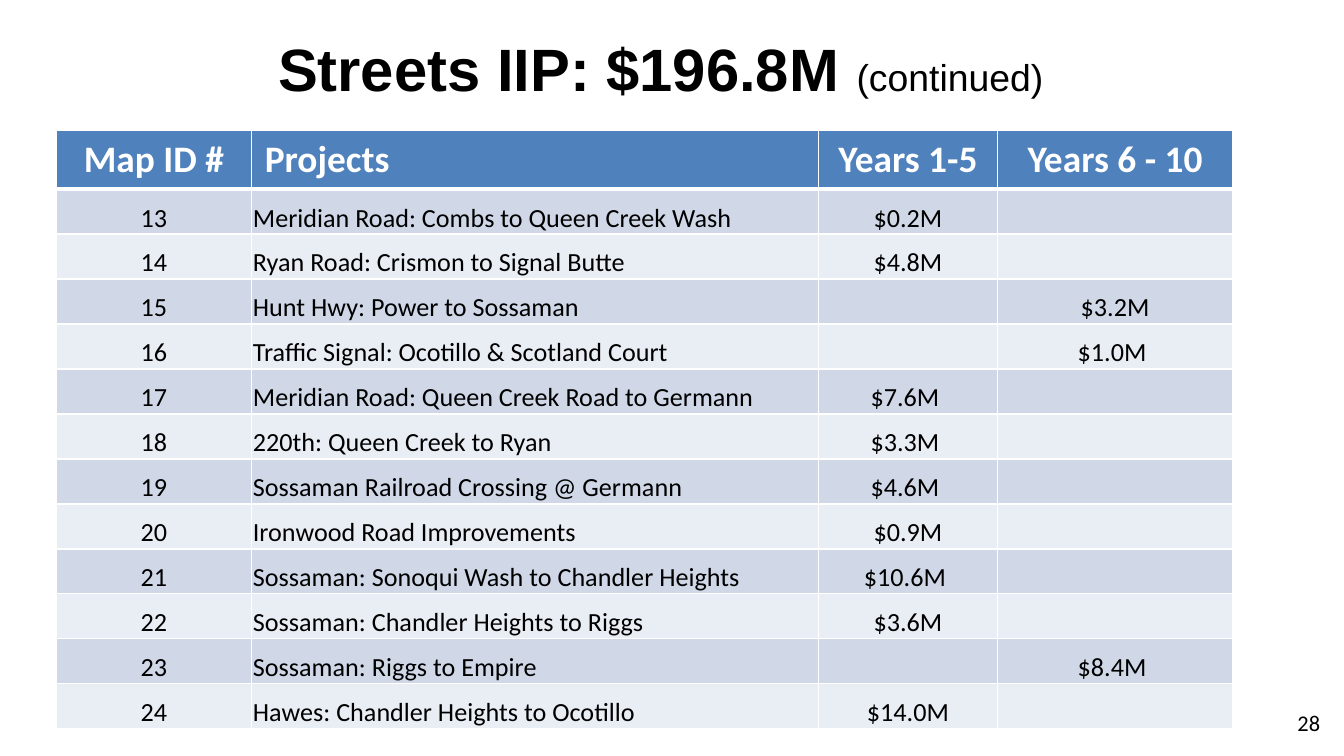
"""Build the Streets IIP slide with its table of projects."""
from lxml.etree import SubElement
from pptx import Presentation
from pptx.dml.color import RGBColor
from pptx.enum.text import MSO_ANCHOR, PP_ALIGN
from pptx.oxml.ns import qn
from pptx.util import Cm, Pt

BLACK = RGBColor(0x00, 0x00, 0x00)
WHITE = RGBColor(0xFF, 0xFF, 0xFF)
BLUE = RGBColor(0x4F, 0x81, 0xBD)
BANDS = (RGBColor(0xD0, 0xD8, 0xE8), RGBColor(0xE9, 0xED, 0xF4))

TITLE = {"name": "Arial", "size": Pt(32), "bold": True}
SUBTITLE = {"name": "Arial", "size": Pt(20), "bold": False}
NUMBER = {"name": "Calibri", "size": Pt(12), "bold": False}
HEADER = {"name": "Calibri", "size": Pt(20), "bold": True}
BODY = {"name": "Calibri", "size": Pt(14), "bold": False}
TIGHT = {"margin_left": Cm(0.03), "margin_right": Cm(0.03),
         "margin_top": Cm(0.03), "margin_bottom": 0,
         "vertical_anchor": MSO_ANCHOR.BOTTOM}

COL_WIDTHS = (3.68, 10.72, 3.38, 4.45)
ALIGNS = (PP_ALIGN.CENTER, PP_ALIGN.LEFT, PP_ALIGN.CENTER, PP_ALIGN.CENTER)
HEADER_HEIGHT, ROW_HEIGHT = 1.1, 0.85
FIRST_ID = 13
HEADINGS = ("Map ID #", "Projects", "Years 1-5", "Years 6 - 10")
PROJECTS = (
    ("Meridian Road: Combs to Queen Creek Wash", "$0.2M", ""),
    ("Ryan Road: Crismon to Signal Butte", "$4.8M", ""),
    ("Hunt Hwy: Power to Sossaman", "", "$3.2M"),
    ("Traffic Signal: Ocotillo & Scotland Court", "", "$1.0M "),
    ("Meridian Road: Queen Creek Road to Germann", "$7.6M ", ""),
    ("220th: Queen Creek to Ryan", "$3.3M ", ""),
    ("Sossaman Railroad Crossing @ Germann", "$4.6M ", ""),
    ("Ironwood Road Improvements", "$0.9M", ""),
    ("Sossaman: Sonoqui Wash to Chandler Heights", "$10.6M ", ""),
    ("Sossaman: Chandler Heights to Riggs", "$3.6M", ""),
    ("Sossaman: Riggs to Empire", "", "$8.4M "),
    ("Hawes: Chandler Heights to Ocotillo", "$14.0M", ""),
)


def set_attrs(obj, values):
    """Set each named attribute on an object."""
    for name, value in values.items():
        setattr(obj, name, value)


def add_run(p, text, style, color=BLACK):
    """Append a formatted run to a paragraph."""
    r = p.add_run()
    r.text = text
    set_attrs(r.font, style)
    r.font.color.rgb = color


def add_text(s, box, runs, align, anchor=MSO_ANCHOR.TOP):
    """Add a one-paragraph text box made of (text, style) runs."""
    tf = s.shapes.add_textbox(*map(Cm, box)).text_frame
    set_attrs(tf, {"word_wrap": True, "vertical_anchor": anchor})
    p = tf.paragraphs[0]
    p.alignment = align
    for text, style in runs:
        add_run(p, text, style)


def set_borders(cell, top=1, bottom=1):
    """Give a cell white borders with widths in points."""
    tc_pr = cell._tc.get_or_add_tcPr()
    for side, width in {"L": 1, "R": 1, "T": top, "B": bottom}.items():
        ln = SubElement(tc_pr, qn(f"a:ln{side}"), w=str(Pt(width)))
        fill = SubElement(ln, qn("a:solidFill"))
        SubElement(fill, qn("a:srgbClr"), val=str(WHITE))


def fill_cell(cell, text, align, style, color, background):
    """Colour a cell and write its text."""
    cell.fill.solid()
    cell.fill.fore_color.rgb = background
    p = cell.text_frame.paragraphs[0]
    p.alignment = align
    if text:
        add_run(p, text, style, color)


def add_projects(s):
    """Add the table with a header row and banded project rows."""
    rows = [HEADINGS] + [(str(i), *project)
                         for i, project in enumerate(PROJECTS, FIRST_ID)]
    height = HEADER_HEIGHT + ROW_HEIGHT * len(PROJECTS)
    table = s.shapes.add_table(len(rows), len(HEADINGS), Cm(1.07), Cm(2.47),
                               Cm(sum(COL_WIDTHS)), Cm(height)).table
    for column, width in zip(table.columns, COL_WIDTHS):
        column.width = Cm(width)
    for i, row in enumerate(rows):
        table.rows[i].height = Cm(ROW_HEIGHT if i else HEADER_HEIGHT)
        for j, text in enumerate(row):
            cell = table.cell(i, j)
            set_borders(cell, top=3 if i == 1 else 1, bottom=1 if i else 3)
            if i:
                set_attrs(cell, TIGHT)
                look = (BODY, BLACK, BANDS[(i - 1) % 2])
            else:
                look = (HEADER, WHITE, BLUE)
            fill_cell(cell, text, ALIGNS[j], *look)


def main():
    """Build and save the slide."""
    prs = Presentation()
    set_attrs(prs, {"slide_width": Cm(25.4), "slide_height": Cm(14.29)})
    s = prs.slides.add_slide(prs.slide_layouts[6])
    add_text(s, (0.64, 0.08, 23.7, 2.39),
             [("Streets IIP: $196.8M ", TITLE), ("(continued)", SUBTITLE)],
             PP_ALIGN.CENTER, MSO_ANCHOR.MIDDLE)
    add_text(s, (23.93, 13.28, 1.27, 0.76), [("28", NUMBER)], PP_ALIGN.RIGHT)
    add_projects(s)
    prs.save("out.pptx")


if __name__ == "__main__":
    main()
